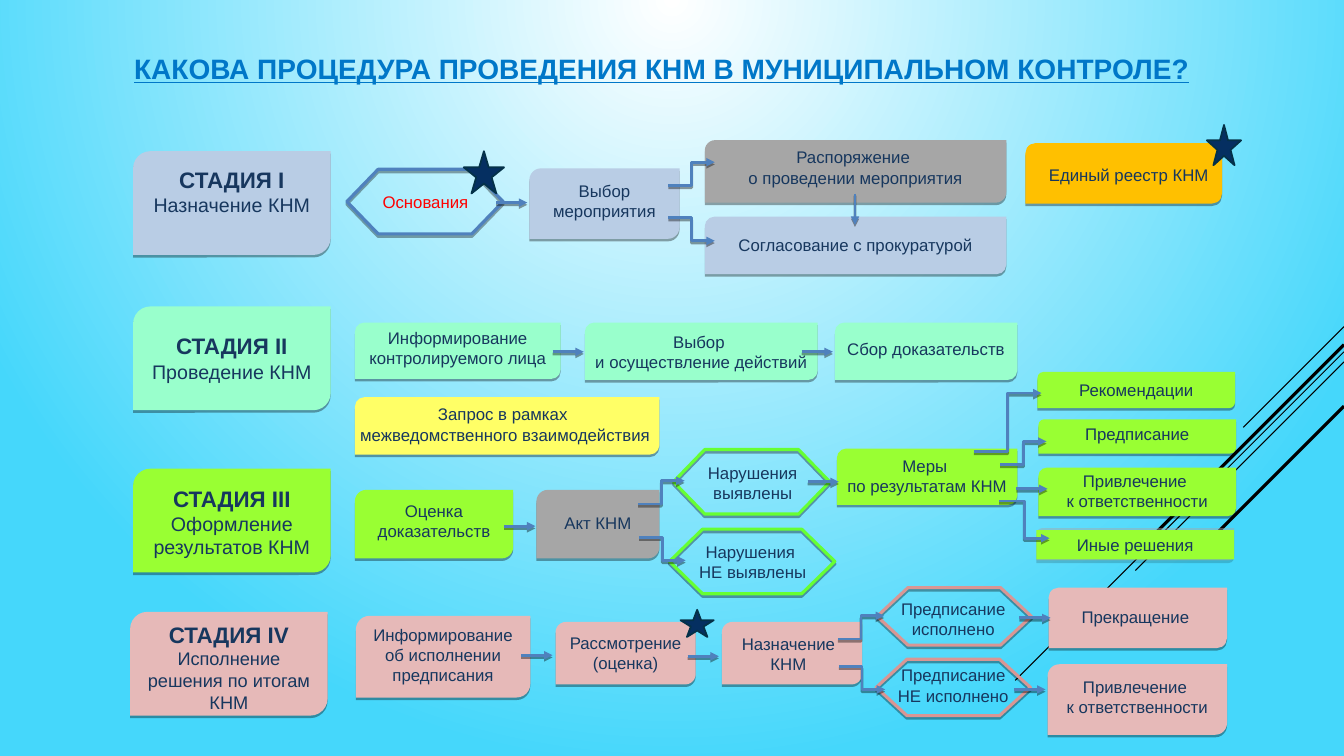
from lxml import etree
from pptx import Presentation
from pptx.dml.color import RGBColor
from pptx.enum.shapes import MSO_CONNECTOR, MSO_SHAPE
from pptx.enum.text import PP_ALIGN
from pptx.oxml.ns import qn
from pptx.util import Inches, Pt

ROUNDED = MSO_SHAPE.ROUND_2_DIAG_RECTANGLE
HEXAGON = MSO_SHAPE.FLOWCHART_PREPARATION
STAR = MSO_SHAPE.STAR_5_POINT
RECTANGLE = MSO_SHAPE.RECTANGLE
STRAIGHT, ELBOW = MSO_CONNECTOR.STRAIGHT, MSO_CONNECTOR.ELBOW
CENTER, LEFT = PP_ALIGN.CENTER, PP_ALIGN.LEFT
color = RGBColor.from_string

NAVY, BLUE, GREY = "17375E", "4F81BD", "A6A6A6"
LILAC, MINT, LIME, ROSE = "B9CDE5", "99FFCC", "99FF33", "E6B9B8"
AMBER, YELLOW, GREEN, PINK = "FFC000", "FFFF66", "66FF33", "D99694"


def write_text(text, box, size=12, hue=NAVY, bold=False, underline=False, align=CENTER, inset=0.1):
    frame = box.text_frame
    frame.word_wrap = True
    frame.margin_left = frame.margin_right = Inches(inset)
    frame.margin_top = frame.margin_bottom = Inches(inset / 2)
    para = frame.paragraphs[0]
    para.text = text.replace("\n", "\v")
    para.alignment = align
    for span in para.runs:
        span.font.name = "Arial"
        span.font.size = Pt(size)
        span.font.bold = bold
        span.font.underline = underline
        span.font.color.rgb = color(hue)
    for line_break in para._p.findall(qn("a:br")):
        etree.SubElement(line_break, qn("a:rPr"), sz=str(size * 100))
    return para


def add_shadow(item, opacity=35, distance=1.8):
    effects = etree.SubElement(item._element.spPr, qn("a:effectLst"))
    shadow = etree.SubElement(effects, qn("a:outerShdw"), blurRad="0", dist=str(Pt(distance)),
                              dir="5400000", rotWithShape="0")
    black = etree.SubElement(shadow, qn("a:srgbClr"), val="000000")
    etree.SubElement(black, qn("a:alpha"), val=str(opacity * 1000))


deck = Presentation()
deck.slide_width, deck.slide_height = Inches(13.33), Inches(7.5)
page = deck.slides.add_slide(deck.slide_layouts[6])

background = page.background.fill
background.gradient()
for stop, hue in zip(background.gradient_stops, ("FFFFFF", "45D7FB")):
    stop.color.rgb = color(hue)
gradient = page._element.find(".//" + qn("a:gradFill"))
gradient.remove(gradient.find(qn("a:lin")))
glow = etree.SubElement(gradient, qn("a:path"), path="circle")
etree.SubElement(glow, qn("a:fillToRect"), l="50000", t="0", r="50000", b="100000")

for top, length, weight in [(3.24, 1, 0.75), (3.49, 3.26, 0.75), (3.59, 2.07, 0.75),
                            (3.42, 1.91, 2.25), (4.03, 1.39, 2.25)]:
    ray = page.shapes.add_connector(STRAIGHT, Inches(13.33), Inches(top),
                                    Inches(13.33 - length), Inches(top + length))
    ray.line.color.rgb = color("000000")
    ray.line.width = Pt(weight)
    etree.SubElement(ray._element.spPr, qn("a:effectLst"))

hexagons = [
    (BLUE, 3.44, 1.68, 1.55, 0.64),
    (PINK, 8.69, 6.54, 1.53, 0.56),
    (PINK, 8.7, 5.83, 1.53, 0.57),
    (GREEN, 6.64, 5.25, 1.64, 0.64),
    (GREEN, 6.68, 4.46, 1.55, 0.64),
]
for hue, *place in hexagons:
    hexagon = page.shapes.add_shape(HEXAGON, *map(Inches, place))
    hexagon.fill.background()
    hexagon.line.color.rgb = color(hue)
    hexagon.line.width = Pt(2.25)
    add_shadow(hexagon)

stages = [
    (LILAC, 1.32, 1.5, 1.6, 0.83, 14, "СТАДИЯ I\nНазначение КНМ"),
    (MINT, 1.32, 3.04, 3.25, 0.59, 14, "СТАДИЯ II\nПроведение КНМ"),
    (LIME, 1.32, 4.65, 4.76, 0.83, 14, "СТАДИЯ III\nОформление результатов КНМ"),
    (ROSE, 1.29, 6.07, 6.11, 0.83, 13, "СТАДИЯ IV\nИсполнение решения по итогам КНМ"),
]
for hue, left, top, text_top, text_height, size, text in stages:
    stage = page.shapes.add_shape(ROUNDED, Inches(left), Inches(top), Inches(1.96), Inches(1.03))
    stage.fill.solid()
    stage.fill.fore_color.rgb = color(hue)
    stage.line.fill.background()
    add_shadow(stage)
    box = page.shapes.add_textbox(Inches(left), Inches(text_top), Inches(1.96), Inches(text_height))
    heading = write_text(text, box, size=size).runs[0]
    heading.font.size = Pt(16)
    heading.font.bold = True

steps = [
    (LILAC, 5.25, 1.67, 1.49, 0.7, 1.74, 2, "Выбор мероприятия"),
    (LILAC, 6.99, 2.15, 2.99, 0.57, 2.28, 1, "Согласование с прокуратурой"),
    (GREY, 6.99, 1.39, 2.99, 0.62, 1.41, 2, "Распоряжение \nо проведении мероприятия"),
    (AMBER, 10.17, 1.42, 1.95, 0.6, 1.58, 1, "Единый реестр КНМ"),
    (MINT, 3.52, 3.2, 2.04, 0.56, 3.2, 2, "Информирование контролируемого лица"),
    (MINT, 5.8, 3.2, 2.31, 0.57, 3.24, 2, "Выбор \nи осуществление действий"),
    (YELLOW, 3.52, 3.94, 3.02, 0.57, 3.96, 2, "Запрос в рамках \nмежведомственного взаимодействия"),
    (MINT, 8.28, 3.2, 1.81, 0.57, 3.31, 1, "Сбор доказательств"),
    (LIME, 3.52, 4.86, 1.57, 0.68, 4.92, 2, "Оценка доказательств"),
    (GREY, 5.32, 4.86, 1.22, 0.68, 5.04, 1, "Акт КНМ"),
    (LIME, 8.3, 4.45, 1.79, 0.56, 4.47, 2, "Меры \nпо результатам КНМ"),
    (LIME, 10.29, 3.69, 1.96, 0.36, 3.72, 1, "Рекомендации"),
    (LIME, 10.3, 4.16, 1.96, 0.34, 4.15, 1, "Предписание"),
    (LIME, 10.3, 4.64, 1.96, 0.48, 4.62, 2, "Привлечение \nк ответственности"),
    (ROSE, 3.53, 6.11, 1.73, 0.81, 6.15, 3, "Информирование об исполнении предписания"),
    (ROSE, 5.51, 6.17, 1.39, 0.62, 6.23, 2, "Рассмотрение (оценка)"),
    (ROSE, 7.16, 6.17, 1.39, 0.62, 6.24, 2, "Назначение КНМ"),
    (ROSE, 10.4, 5.83, 1.77, 0.6, 5.97, 1, "Прекращение "),
    (ROSE, 10.39, 6.59, 1.78, 0.7, 6.66, 2, "Привлечение \nк ответственности"),
]
text_spans = {
    "Единый реестр КНМ": (10.29, 1.81),
    "Запрос в рамках \nмежведомственного взаимодействия": (3.45, 3.12),
    "Назначение КНМ": (7.16, 1.32),
}
for hue, left, top, width, height, text_top, lines, text in steps:
    step = page.shapes.add_shape(ROUNDED, Inches(left), Inches(top), Inches(width), Inches(height))
    step.fill.solid()
    step.fill.fore_color.rgb = color(hue)
    step.line.fill.background()
    add_shadow(step)
    text_left, text_width = text_spans.get(text, (left, width))
    box = page.shapes.add_textbox(Inches(text_left), Inches(text_top),
                                  Inches(text_width), Inches(0.09 + 0.2 * lines))
    write_text(text, box)

backing = page.shapes.add_shape(ROUNDED, Inches(10.28), Inches(5.24), Inches(1.96), Inches(0.32))
backing.fill.solid()
backing.fill.fore_color.rgb = color(GREY)
etree.SubElement(backing._element.spPr.find(".//" + qn("a:srgbClr")), qn("a:alpha"), val="46000")
backing.line.fill.background()
add_shadow(backing)
other = page.shapes.add_shape(RECTANGLE, Inches(10.28), Inches(5.26), Inches(1.96), Inches(0.29))
other.shadow.inherit = False
other.fill.solid()
other.fill.fore_color.rgb = color(LIME)
other.line.fill.background()
write_text("Иные решения", other)

hexagon_texts = [
    ("Основания", "FF0000", 3.45, 1.85, 1.54, 0.29),
    ("Нарушения выявлены", NAVY, 6.77, 4.54, 1.39, 0.49),
    ("Нарушения \nНЕ выявлены", NAVY, 6.77, 5.32, 1.39, 0.49),
    ("Предписание исполнено", NAVY, 8.76, 5.89, 1.39, 0.49),
    ("Предписание НЕ исполнено", NAVY, 8.76, 6.55, 1.39, 0.49),
]
for text, hue, *place in hexagon_texts:
    write_text(text, page.shapes.add_textbox(*map(Inches, place)), hue=hue)

level_starts = [(4.92, 2.01), (8.01, 4.78), (10.08, 4.85), (5, 5.22), (5.17, 6.5), (6.82, 6.51),
                (10.11, 6.13), (10.06, 6.84), (5.48, 3.49), (7.95, 3.49)]
arrows = [(STRAIGHT, x, y, x + 0.31, y) for x, y in level_starts]
arrows.append((STRAIGHT, 8.48, 1.92, 8.48, 2.23))
branch_starts = [(6.63, 1.84, -0.23), (6.63, 2.16, 0.23), (6.33, 5, -0.23), (6.34, 5.33, 0.23),
                 (9.92, 4.61, -0.23), (8.31, 6.34, -0.23), (8.32, 6.61, 0.23)]
arrows += [(ELBOW, x, y, x + 0.46, y + rise) for x, y, rise in branch_starts]
arrows += [(ELBOW, 9.91, 4.97, 10.41, 5.34), (ELBOW, 9.66, 4.48, 10.33, 3.9)]
for kind, *ends in arrows:
    arrow = page.shapes.add_connector(kind, *map(Inches, ends))
    arrow.line.color.rgb = color(BLUE)
    arrow.line.width = Pt(2)
    etree.SubElement(arrow.line._get_or_add_ln(), qn("a:tailEnd"), type="triangle")
    add_shadow(arrow, opacity=38, distance=1.6)

title = page.shapes.add_textbox(Inches(1.33), Inches(0.51), Inches(10.77), Inches(0.49))
write_text("КАКОВА ПРОЦЕДУРА ПРОВЕДЕНИЯ КНМ В МУНИЦИПАЛЬНОМ КОНТРОЛЕ?", title,
           size=20, hue="0077C8", bold=True, underline=True, align=LEFT, inset=0)

for place in [(4.6, 1.5, 0.4, 0.42), (11.97, 1.24, 0.34, 0.4), (6.75, 6.05, 0.33, 0.27)]:
    star = page.shapes.add_shape(STAR, *map(Inches, place))
    star.shadow.inherit = False
    star.fill.solid()
    star.fill.fore_color.rgb = color("052F61")
    star.line.color.rgb = color("043148")
    star.line.width = Pt(1.25)

deck.save("out.pptx")
